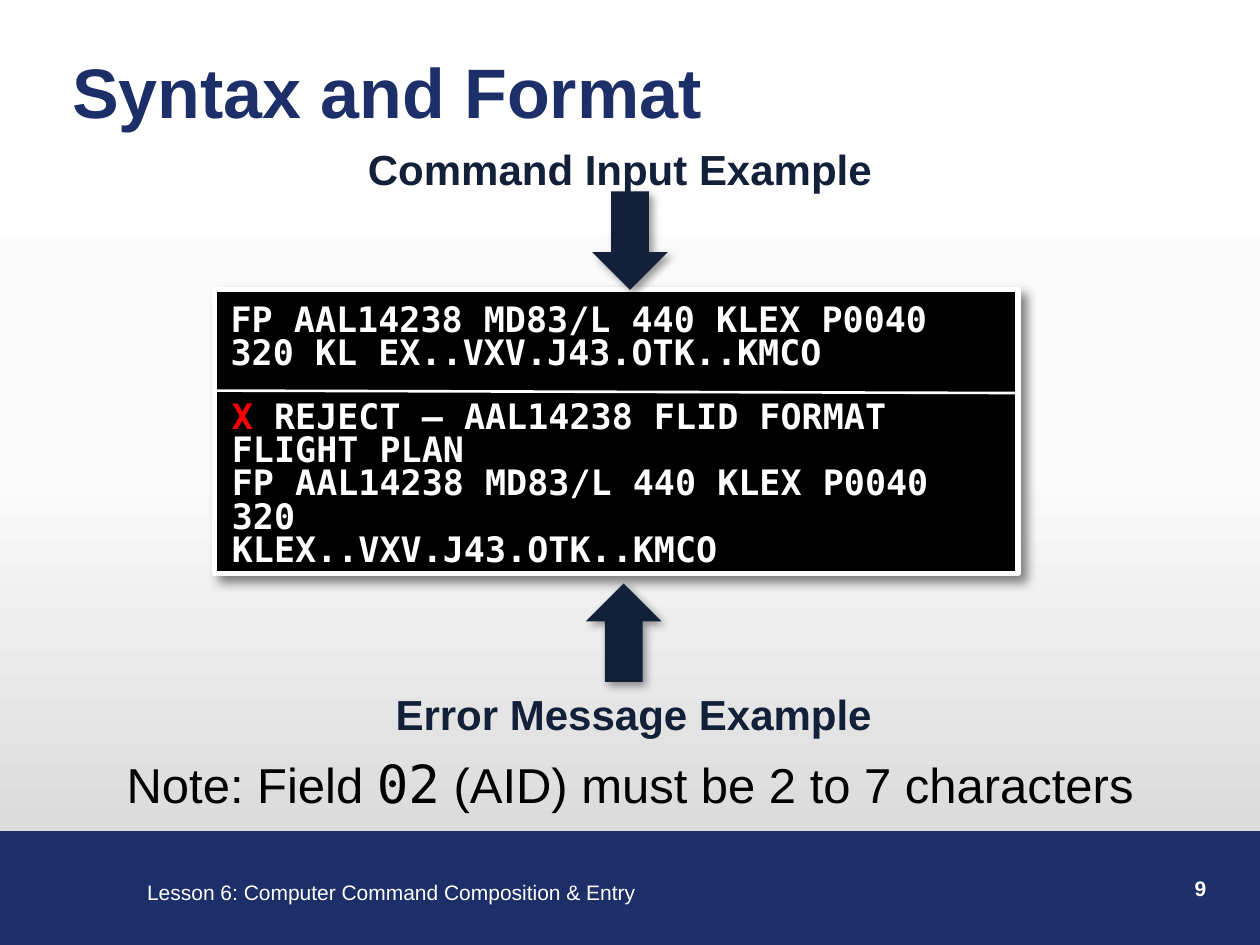
import copy
from dataclasses import dataclass

import pptx
import pptx.dml.color
import pptx.enum.shapes
import pptx.enum.text
import pptx.oxml
import pptx.oxml.ns
import pptx.util

Pt = pptx.util.Pt
RGB = pptx.dml.color.RGBColor
ALIGN = pptx.enum.text.PP_ALIGN
SHAPE = pptx.enum.shapes.MSO_SHAPE
qn = pptx.oxml.ns.qn

WHITE = RGB(0xFF, 0xFF, 0xFF)
BLACK = RGB(0x00, 0x00, 0x00)
RED = RGB(0xFF, 0x00, 0x00)
BLUE = RGB(0x1D, 0x2F, 0x68)
NAVY = RGB(0x12, 0x20, 0x39)
GRAY = RGB(0x80, 0x80, 0x80)
BACKGROUND = [(0, WHITE), (0.5, RGB(0xFB, 0xFB, 0xFB)), (1, RGB(0xD0, 0xD0, 0xD0))]
SANS, MONO = "Arial", "DejaVu Sans Mono"


@dataclass(frozen=True)
class Run:
    text: str
    size: float
    color: RGB
    bold: bool = False
    font: str = SANS


@dataclass(frozen=True)
class Box:
    left: float
    top: float
    width: float
    height: float
    paragraphs: list[list[Run]]
    align: ALIGN = ALIGN.LEFT
    wrap: bool = True
    inset: bool = True
    spacing: float | None = None


@dataclass(frozen=True)
class Shadow:
    color: RGB
    alpha: int
    blur: float
    distance: float


@dataclass(frozen=True)
class Arrow:
    left: float
    top: float
    rotation: int


def code(text: str, color: RGB = WHITE) -> Run:
    return Run(text, 20, color, True, MONO)


def label(left: float, top: float, width: float, text: str) -> Box:
    return Box(left, top, width, 36, [[Run(text, 24, NAVY, True)]], ALIGN.CENTER, wrap=False)


def add_run(p, run: Run) -> None:
    r = p.add_run()
    r.text = run.text
    r.font.name = run.font
    r.font.size = Pt(run.size)
    r.font.bold = run.bold
    r.font.color.rgb = run.color


def add_box(s, box: Box) -> None:
    sp = s.shapes.add_textbox(Pt(box.left), Pt(box.top), Pt(box.width), Pt(box.height))
    tf = sp.text_frame
    tf.word_wrap = box.wrap
    if not box.inset:
        tf.margin_left = tf.margin_top = tf.margin_right = tf.margin_bottom = 0
    for i, runs in enumerate(box.paragraphs):
        p = tf.add_paragraph() if i else tf.paragraphs[0]
        p.alignment = box.align
        if box.spacing:
            p.line_spacing = Pt(box.spacing)
        for run in runs:
            add_run(p, run)


def add_filled(s, kind: SHAPE, left: float, top: float, width: float, height: float, fill: RGB):
    sp = s.shapes.add_shape(kind, Pt(left), Pt(top), Pt(width), Pt(height))
    sp.shadow.inherit = False
    sp.fill.solid()
    sp.fill.fore_color.rgb = fill
    sp.line.fill.background()
    return sp


def set_line(sp, color: RGB, width: float) -> None:
    sp.line.color.rgb = color
    sp.line.width = Pt(width)


def set_shadow(sp, shadow: Shadow) -> None:
    """Cast a shadow to the lower right, whatever the shape's rotation."""
    effects = sp._element.spPr.find(qn("a:effectLst"))
    effects.append(pptx.oxml.parse_xml(
        f'<a:outerShdw {pptx.oxml.ns.nsdecls("a")} blurRad="{Pt(shadow.blur)}" '
        f'dist="{Pt(shadow.distance)}" dir="2700000" algn="tl" rotWithShape="0">'
        f'<a:srgbClr val="{shadow.color}"><a:alpha val="{shadow.alpha * 1000}"/></a:srgbClr>'
        "</a:outerShdw>"))


def add_arrow(s, arrow: Arrow) -> None:
    sp = add_filled(s, SHAPE.UP_ARROW, arrow.left, arrow.top, 43.2, 56.2, NAVY)
    sp.rotation = arrow.rotation
    set_shadow(sp, Shadow(BLACK, 40, 5, 3))


def set_background(s) -> None:
    fill = s.background.fill
    fill.gradient()
    fill.gradient_angle = 270
    stops = s._element.find(".//" + qn("a:gsLst"))
    stops.append(copy.deepcopy(stops[0]))
    for stop, (position, color) in zip(fill.gradient_stops, BACKGROUND):
        stop.position = position
        stop.color.rgb = color


def set_title(s, run: Run) -> None:
    sp = s.shapes.title
    sp.left, sp.top, sp.width, sp.height = Pt(34), Pt(27.4), Pt(667), Pt(48.2)
    tf = sp.text_frame
    tf.vertical_anchor = pptx.enum.text.MSO_ANCHOR.MIDDLE
    p = tf.paragraphs[0]
    p.alignment = ALIGN.LEFT
    add_run(p, run)


ARROWS = [Arrow(338.4, 109.4, 180), Arrow(334.8, 333.4, 0)]
BOXES = [
    Box(77, 499, 296, 21.6,
        [[Run("Lesson 6: Computer Command Composition & Entry", 12, WHITE)]], wrap=False),
    Box(546.5, 496.8, 149.8, 36, [[Run("9", 12, WHITE, True)]], ALIGN.RIGHT),
    label(201.6, 78.5, 305.3, "Command Input Example"),
    label(217.4, 390.2, 289.4, "Error Message Example"),
    Box(131.8, 175, 440, 38.9,
        [[code("FP AAL14238 MD83/L 440 KLEX P0040 320 KL EX..VXV.J43.OTK..KMCO")]],
        inset=False, spacing=19),
    Box(132.5, 230.4, 433.4, 77,
        [[code("X ", RED), code("REJECT – AAL14238 FLID FORMAT")],
         [code("FLIGHT PLAN")],
         [code("FP AAL14238 MD83/L 440 KLEX P0040 320")],
         [code("KLEX..VXV.J43.OTK..KMCO")]],
        inset=False, spacing=19),
    Box(45.4, 425.5, 629.3, 43.9,
        [[Run("Note: Field ", 28, BLACK), Run("02", 30, BLACK, font=MONO),
          Run(" (AID) must be 2 to 7 characters", 28, BLACK)]], ALIGN.CENTER),
]


def main() -> None:
    prs = pptx.Presentation()
    prs.slide_width, prs.slide_height = Pt(720), Pt(540)
    s = prs.slides.add_slide(prs.slide_layouts[5])
    set_background(s)
    set_title(s, Run("Syntax and Format", 40, BLUE, True))

    footer = add_filled(s, SHAPE.RECTANGLE, -1.4, 475.2, 721.4, 64.8, BLUE)
    set_line(footer, BLUE, 0.75)
    screen = add_filled(s, SHAPE.RECTANGLE, 122.4, 165.6, 459.4, 162, BLACK)
    set_line(screen, WHITE, 3)
    set_shadow(screen, Shadow(GRAY, 100, 6, 5))

    for box in BOXES:
        add_box(s, box)

    divider = s.shapes.add_connector(pptx.enum.shapes.MSO_CONNECTOR.STRAIGHT,
                                     Pt(122.4), Pt(223.2), Pt(582.5), Pt(224.6))
    set_line(divider, WHITE, 1.5)
    divider._element.spPr.append(pptx.oxml.parse_xml(
        f'<a:effectLst {pptx.oxml.ns.nsdecls("a")}/>'))

    for arrow in ARROWS:
        add_arrow(s, arrow)
    prs.save("out.pptx")


if __name__ == "__main__":
    main()
